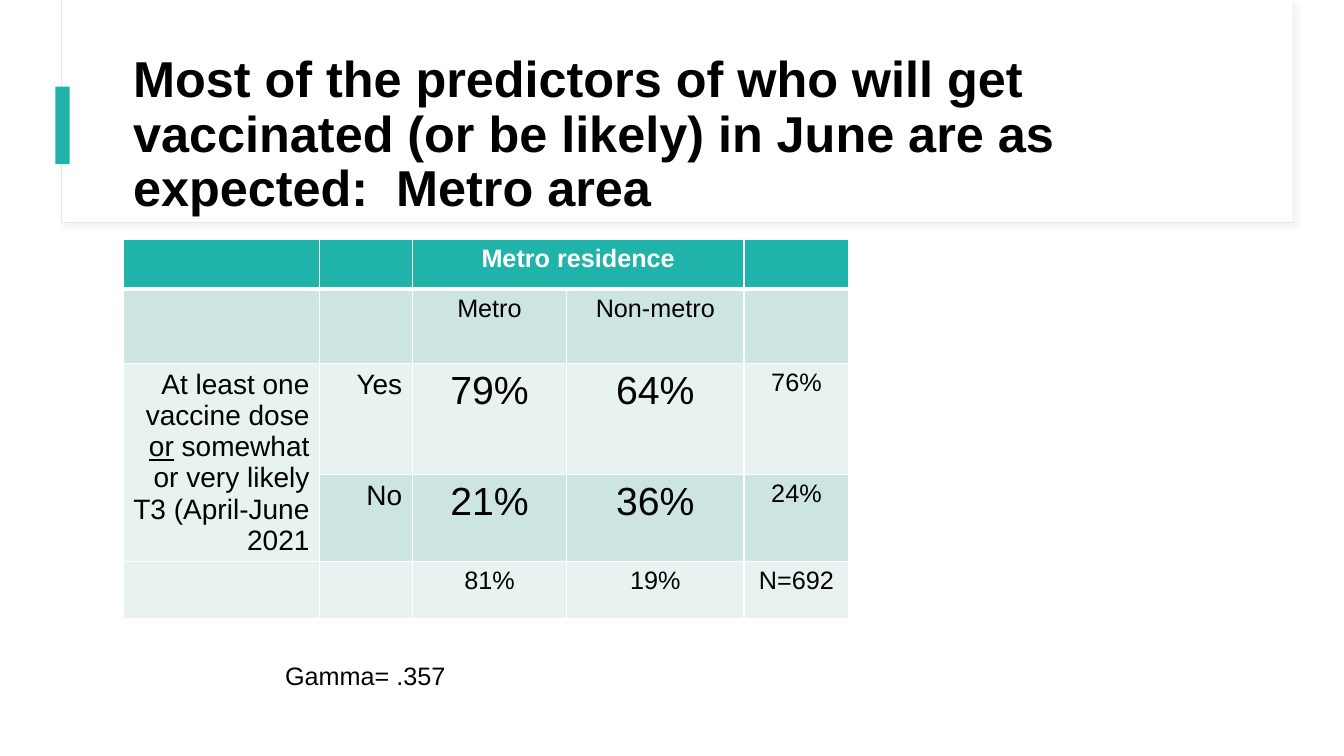
"""Build a slide with a cross table of vaccination likelihood by metro residence."""
import pptx
import pptx.dml.color
import pptx.enum.shapes
import pptx.enum.text
import pptx.oxml
import pptx.oxml.ns
import pptx.util

Inches = pptx.util.Inches
Pt = pptx.util.Pt
ALIGN = pptx.enum.text.PP_ALIGN

TITLE = ("Most of the predictors of who will get vaccinated (or be likely) "
         "in June are as expected:  Metro area")
NOTE = "Gamma= .357"
OUTCOME = ["At least one vaccine dose ", "or", " somewhat or very likely T3 (April-June 2021"]
ROWS = [
    [[], [], ["Metro residence"], [], []],
    [[], [], ["Metro"], ["Non-metro"], []],
    [OUTCOME, ["Yes"], ["79%"], ["64%"], ["76%"]],
    [[], ["No"], ["21%"], ["36%"], ["24%"]],
    [[], [], ["81%"], ["19%"], ["N=692"]],
]
COL_WIDTHS = [1.95, 0.92, 1.53, 1.76, 1.04]
ROW_HEIGHTS = [0.49, 0.74, 1.1, 0.86, 0.57]
MERGES = [((0, 2), (0, 3)), ((2, 0), (3, 0))]
COLORS = {"teal": "20B3AA", "band": "CDE5E2", "pale": "E8F2F1", "white": "FFFFFF",
          "black": "000000", "frame": "E3E6EF", "shadow": "D9D9D9"}
ROW_FILLS = ["teal", "band", "pale", "band", "pale"]
PANELS = [
    ((0.61, 0, 12.21, 2.21), "white", "frame"),
    ((0.62, 0, 12.2, 2.2), "white", None),
    ((0.55, 0.86, 0.14, 0.77), "teal", None),
]


def rgb(name):
    """Return the named colour."""
    return pptx.dml.color.RGBColor.from_string(COLORS[name])


def add_run(p, text, size, color="black", bold=False):
    """Append a formatted run to a paragraph."""
    r = p.add_run()
    r.text = text
    r.font.name = "Arial"
    r.font.size = Pt(size)
    r.font.bold = bold
    r.font.color.rgb = rgb(color)
    return r


def add_panel(s, box, fill, line):
    """Add a rectangle; an outlined one also casts a soft shadow."""
    sp = s.shapes.add_shape(pptx.enum.shapes.MSO_SHAPE.RECTANGLE, *map(Inches, box))
    sp.shadow.inherit = False
    sp.fill.solid()
    sp.fill.fore_color.rgb = rgb(fill)
    if line is None:
        sp.line.fill.background()
        return
    sp.line.color.rgb = rgb(line)
    sp.line.width = Pt(0.75)
    effects = sp.element.spPr.find(pptx.oxml.ns.qn("a:effectLst"))
    effects.append(pptx.oxml.parse_xml(
        f'<a:outerShdw {pptx.oxml.ns.nsdecls("a")} blurRad="{Pt(4)}" dist="{Pt(3)}" '
        f'dir="2700000"><a:srgbClr val="{COLORS["shadow"]}"><a:alpha val="30000"/>'
        '</a:srgbClr></a:outerShdw>'))


def set_borders(cell, top, bottom):
    """Draw white cell borders of the given top and bottom widths."""
    tc_pr = cell._tc.get_or_add_tcPr()
    for i, (side, width) in enumerate(zip("LRTB", (1, 1, top, bottom))):
        tc_pr.insert(i, pptx.oxml.parse_xml(
            f'<a:ln{side} {pptx.oxml.ns.nsdecls("a")} w="{Pt(width)}"><a:solidFill>'
            f'<a:srgbClr val="{COLORS["white"]}"/></a:solidFill></a:ln{side}>'))


def text_size(row, col):
    """Return the point size for a table position."""
    if row in (2, 3):
        return (20, 20, 28, 28, 18)[col]
    return 18


def add_table(s):
    """Add the cross table."""
    tbl = s.shapes.add_table(len(ROWS), len(COL_WIDTHS), Inches(1.22), Inches(2.38),
                             Inches(sum(COL_WIDTHS)), Inches(sum(ROW_HEIGHTS))).table
    for column, width in zip(tbl.columns, COL_WIDTHS):
        column.width = Inches(width)
    for row, height in zip(tbl.rows, ROW_HEIGHTS):
        row.height = Inches(height)
    for i, texts in enumerate(ROWS):
        for j, parts in enumerate(texts):
            cell = tbl.cell(i, j)
            cell.fill.solid()
            cell.fill.fore_color.rgb = rgb(ROW_FILLS[i])
            set_borders(cell, 3 if i == 1 else 1, 3 if i == 0 else 1)
            p = cell.text_frame.paragraphs[0]
            p.alignment = ALIGN.RIGHT if j < 2 else ALIGN.CENTER
            for part in parts:
                r = add_run(p, part, text_size(i, j), "white" if i == 0 else "black", i == 0)
                if part == "or":
                    r.font.underline = True
    for first, last in MERGES:
        tbl.cell(*first).merge(tbl.cell(*last))


def add_title(s):
    """Fill the title placeholder and bring it in front of the panels."""
    sp = s.shapes.title
    sp.left, sp.top, sp.width, sp.height = map(Inches, (1.22, 0.6, 11.12, 1.5))
    s.shapes.element.append(sp.element)
    tf = sp.text_frame
    tf.word_wrap = True
    tf.auto_size = pptx.enum.text.MSO_AUTO_SIZE.NONE
    tf.vertical_anchor = pptx.enum.text.MSO_ANCHOR.MIDDLE
    p = tf.paragraphs[0]
    p.alignment = ALIGN.LEFT
    p.line_spacing = 0.9
    add_run(p, TITLE, 36, bold=True)


def main():
    """Create and save the presentation."""
    prs = pptx.Presentation()
    prs.slide_width, prs.slide_height = Inches(13.33), Inches(7.5)
    s = prs.slides.add_slide(prs.slide_layouts[5])
    for panel in PANELS:
        add_panel(s, *panel)
    add_title(s)
    add_table(s)
    tf = s.shapes.add_textbox(*map(Inches, (2.73, 6.5, 1.83, 0.4))).text_frame
    tf.word_wrap = False
    tf.auto_size = pptx.enum.text.MSO_AUTO_SIZE.SHAPE_TO_FIT_TEXT
    add_run(tf.paragraphs[0], NOTE, 18)
    prs.save("out.pptx")


if __name__ == "__main__":
    main()
